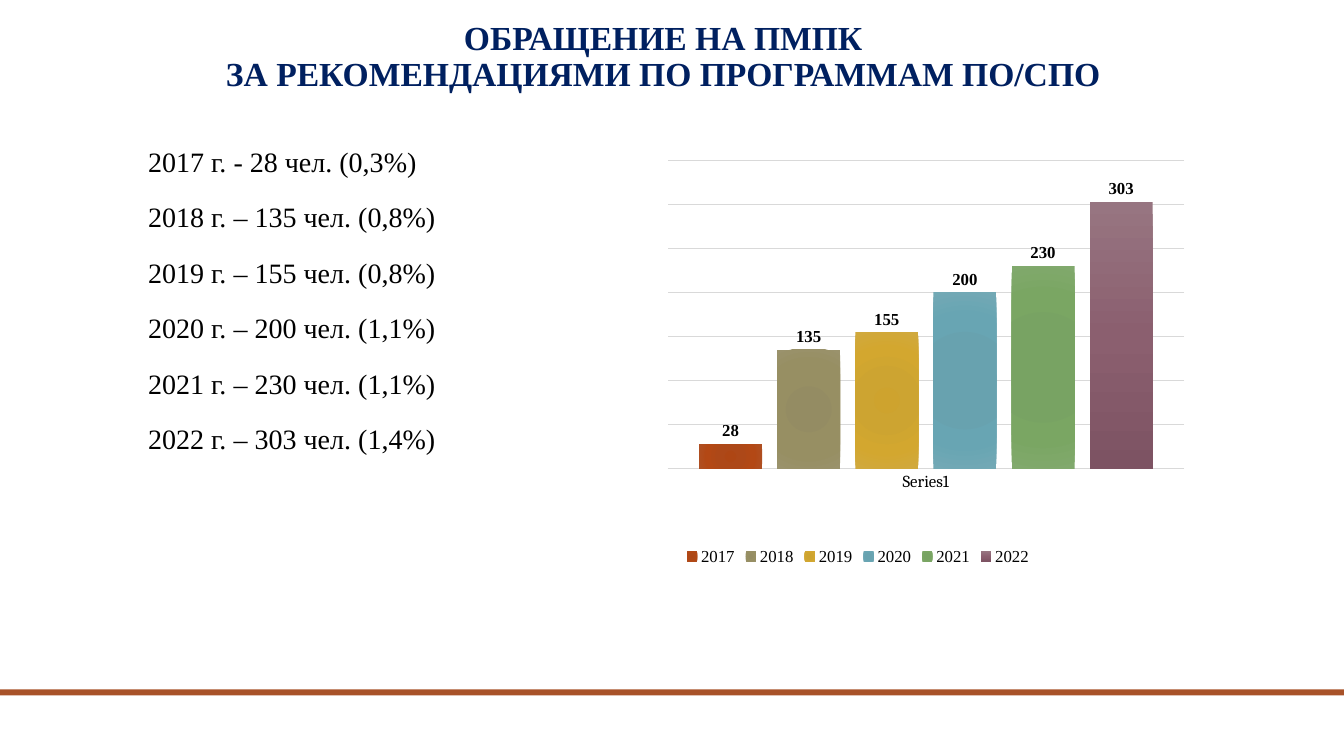
from lxml import etree
from pptx import Presentation
from pptx import util as u
from pptx.chart.data import CategoryChartData
from pptx.dml.color import RGBColor
from pptx.enum import chart as ch
from pptx.enum import shapes, text
from pptx.oxml import parse_xml
from pptx.oxml.ns import nsdecls, qn

PX = u.Inches(1) // 100
SERIF = "Times New Roman"
CHART_FONT = "Cambria"
NAVY = RGBColor(0x00, 0x20, 0x60)
BLACK = RGBColor(0x00, 0x00, 0x00)
RUST = RGBColor(0xA8, 0x52, 0x29)
TAUPE = RGBColor(0x51, 0x4A, 0x40)
GRID_GREY = RGBColor(0xD9, 0xD9, 0xD9)

HEADING = "ОБРАЩЕНИЕ НА ПМПК \vЗА РЕКОМЕНДАЦИЯМИ ПО ПРОГРАММАМ ПО/СПО "
YEARS = [
    "2017 г. - 28 чел. (0,3%)",
    "2018 г. – 135 чел. (0,8%)",
    "2019 г. – 155 чел. (0,8%)",
    "2020 г. – 200 чел. (1,1%)",
    "2021 г. – 230 чел. (1,1%)",
    "2022 г. – 303 чел. (1,4%)",
]
RADIAL_STOPS = (0, 34, 70, 100)
LINEAR_STOPS = (0, 50, 100)
APPEALS = [
    ("2017", 28, RADIAL_STOPS, ("AE4614", "AD4818", "B34815", "AE5023")),
    ("2018", 135, RADIAL_STOPS, ("948B61", "948C63", "978F63", "9A926C")),
    ("2019", 155, RADIAL_STOPS, ("CEA32E", "CDA431", "D3A72F", "D0A93E")),
    ("2020", 200, RADIAL_STOPS, ("66A1AE", "68A2AF", "68A5B3", "73A9B5")),
    ("2021", 230, RADIAL_STOPS, ("77A261", "78A363", "7AA663", "81A96D")),
    ("2022", 303, LINEAR_STOPS, ("977581", "8B5F6F", "7D5363")),
]


def emu(box):
    """Turn a box in px into EMU lengths."""
    return [length * PX for length in box]


def style_font(font, size, color=BLACK, name=SERIF, bold=False):
    """Set the typeface, size, colour and weight of a font."""
    font.name, font.size, font.bold = name, u.Pt(size), bold
    font.color.rgb = color


def add_text(slide, box, lines, size, color=BLACK, bold=False, gap=0,
             align=text.PP_ALIGN.CENTER, anchor=text.MSO_ANCHOR.TOP):
    """Place a wrapped text box with one paragraph per line."""
    frame = slide.shapes.add_textbox(*emu(box)).text_frame
    frame.word_wrap = True
    frame.vertical_anchor = anchor
    for index, line in enumerate(lines):
        paragraph = frame.add_paragraph() if index else frame.paragraphs[0]
        paragraph.text = line
        paragraph.alignment = align
        paragraph.line_spacing = 0.9
        paragraph.space_before = u.Pt(gap if index else 0)
        for run in paragraph.runs:
            style_font(run.font, size, color, bold=bold)


def add_footer_bar(slide, box):
    """Draw the coloured bar above the foot of the slide."""
    bar = slide.shapes.add_shape(shapes.MSO_SHAPE.RECTANGLE, *emu(box))
    bar.shadow.inherit = False
    bar.fill.solid()
    bar.fill.fore_color.rgb = RUST
    bar.line.fill.background()


def fill_gradient(series, positions, colors):
    """Fill a series with a radial gradient, or a vertical one for three stops."""
    stops = "".join(
        f'<a:gs pos="{position * 1000}"><a:srgbClr val="{color}"/></a:gs>'
        for position, color in zip(positions, colors))
    if positions is RADIAL_STOPS:
        shade = ('<a:path path="circle"><a:fillToRect l="100000" t="100000" '
                 'r="100000" b="100000"/></a:path>')
    else:
        shade = '<a:lin ang="5400000" scaled="0"/>'
    properties = series.format.fill._xPr
    properties.insert(0, parse_xml(
        f'<a:gradFill {nsdecls("a")} rotWithShape="1">'
        f'<a:gsLst>{stops}</a:gsLst>{shade}</a:gradFill>'))


def place_plot(chart, x, y, w, h):
    """Fix the inner plot area as fractions of the chart."""
    area = chart._chartSpace.chart.plotArea
    for old in area.findall(qn("c:layout")):
        area.remove(old)
    layout = etree.Element(qn("c:layout"))
    manual = etree.SubElement(layout, qn("c:manualLayout"))
    settings = {"layoutTarget": "inner", "xMode": "edge", "yMode": "edge",
                "x": x, "y": y, "w": w, "h": h}
    for tag, value in settings.items():
        etree.SubElement(manual, qn(f"c:{tag}")).set("val", str(value))
    area.insert(0, layout)


def add_appeals_chart(slide, box):
    """Place the column chart of appeals by year."""
    data = CategoryChartData()
    data.categories = ["Series1"]
    for year, count, *_ in APPEALS:
        data.add_series(year, [count])
    chart = slide.shapes.add_chart(
        ch.XL_CHART_TYPE.COLUMN_CLUSTERED, *emu(box), data).chart
    style_font(chart.font, 10, TAUPE, CHART_FONT)
    chart.has_title = False
    place_plot(chart, 0.242, 0.04, 0.7, 0.724)

    plot = chart.plots[0]
    plot.vary_by_categories = False
    plot.gap_width, plot.overlap = 100, -24
    for series, (_, _, positions, colors) in zip(plot.series, APPEALS):
        fill_gradient(series, positions, colors)
        labels = series.data_labels
        labels.show_value = True
        labels.position = ch.XL_LABEL_POSITION.OUTSIDE_END
        style_font(labels.font, 12, bold=True)

    years = chart.category_axis
    years.major_tick_mark = ch.XL_TICK_MARK.NONE
    style_font(years.tick_labels.font, 12, name=CHART_FONT)
    counts = chart.value_axis
    counts.visible = False
    counts.minimum_scale, counts.maximum_scale, counts.major_unit = 0, 350, 50
    counts.has_major_gridlines = True
    for line in (years.format.line, counts.major_gridlines.format.line):
        line.color.rgb = GRID_GREY
        line.width = u.Pt(0.75)

    chart.has_legend = True
    chart.legend.position = ch.XL_LEGEND_POSITION.BOTTOM
    chart.legend.include_in_layout = False
    style_font(chart.legend.font, 12)


def build_appeals_slide(deck):
    """Build the slide of appeals with its list and chart."""
    slide = deck.slides.add_slide(deck.slide_layouts[6])
    add_footer_bar(slide, (0, 684, 1333, 6))
    add_text(slide, (137, 26, 1050, 72), [HEADING], 24, NAVY, bold=True,
             anchor=text.MSO_ANCHOR.BOTTOM)
    add_text(slide, (137, 142, 405, 359), YEARS, 20, gap=18,
             align=text.PP_ALIGN.JUSTIFY)
    add_appeals_chart(slide, (485, 142, 732, 423))


def main():
    """Create and save the deck."""
    deck = Presentation()
    deck.slide_width, deck.slide_height = emu((1333, 750))
    build_appeals_slide(deck)
    deck.save("out.pptx")


if __name__ == "__main__":
    main()
